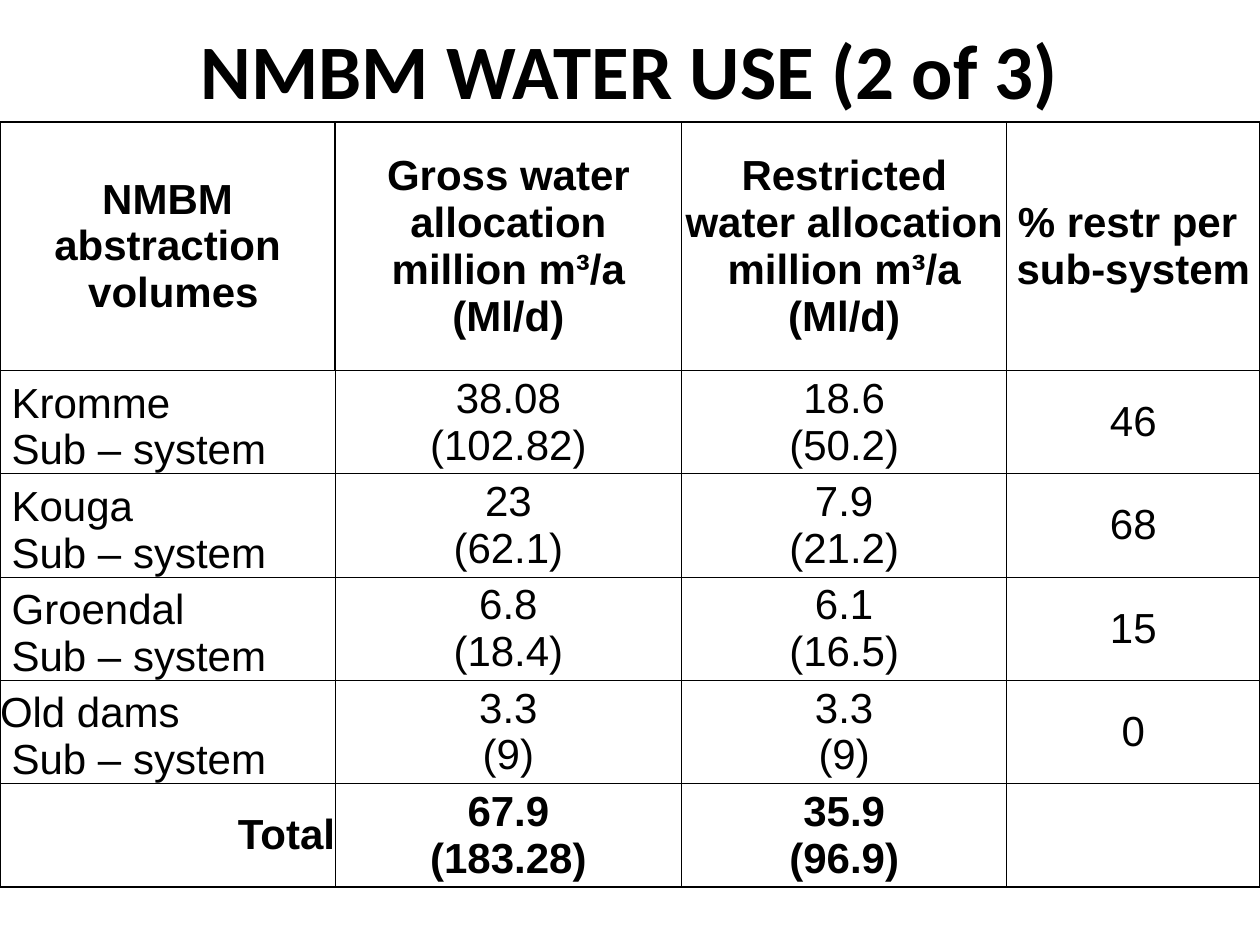
from lxml import etree
from pptx import Presentation
from pptx.dml.color import RGBColor
from pptx.enum.text import MSO_ANCHOR, PP_ALIGN
from pptx.oxml.ns import qn
from pptx.util import Inches, Pt

LEFT, CENTER, RIGHT = PP_ALIGN.LEFT, PP_ALIGN.CENTER, PP_ALIGN.RIGHT
MIDDLE, BOTTOM = MSO_ANCHOR.MIDDLE, MSO_ANCHOR.BOTTOM
BLACK, WHITE = "000000", "FFFFFF"
TITLE_ONLY = 5

COLUMN_WIDTHS = [2.66, 2.75, 2.58, 2.01]
HEADER_HEIGHT, ROW_HEIGHT = 1.97, 0.82
TITLE_TOP, TABLE_TOP = 0.12, 0.97

# One list per row; each cell is a list of its paragraphs.
ROWS = [
    [[" NMBM ", " abstraction ", " volumes"],
     ["Gross water allocation", "million m³/a (Ml/d)"],
     ["Restricted water allocation million m³/a (Ml/d)"],
     ["% restr per ", "sub-system"]],
    [[" Kromme", " Sub – system"], ["38.08", "(102.82)"], ["18.6", "(50.2)"], ["46"]],
    [[" Kouga", " Sub – system"], ["23", "(62.1)"], ["7.9", "(21.2)"], ["68"]],
    [[" Groendal", " Sub – system"], ["6.8", "(18.4)"], ["6.1", "(16.5)"], ["15"]],
    [["Old dams", " Sub – system"], ["3.3", "(9)"], ["3.3", "(9)"], ["0"]],
    [["Total"], ["67.9", "(183.28)"], ["35.9", "(96.9)"], []],
]
LAST_ROW, LAST_COLUMN = len(ROWS) - 1, len(COLUMN_WIDTHS) - 1


def write(frame, lines, font, size, bold, align):
    """Fill a text frame with one single-run paragraph per line."""
    for index, line in enumerate(lines):
        para = frame.add_paragraph() if index else frame.paragraphs[0]
        para.alignment = align
        span = para.add_run()
        span.text = line
        span.font.name = font
        span.font.size = Pt(size)
        span.font.bold = bold
        span.font.color.rgb = RGBColor.from_string(BLACK)


def draw_border(cell, side, points):
    line = etree.SubElement(cell._tc.get_or_add_tcPr(), qn(f"a:ln{side}"), w=str(Pt(points)))
    fill = etree.SubElement(line, qn("a:solidFill"))
    etree.SubElement(fill, qn("a:srgbClr"), val=BLACK)


deck = Presentation()
deck.slide_width, deck.slide_height = Inches(10), Inches(7.5)
page = deck.slides.add_slide(deck.slide_layouts[TITLE_ONLY])

title = page.shapes.title
title.left, title.top = 0, Inches(TITLE_TOP)
title.width, title.height = deck.slide_width, Inches(TABLE_TOP - TITLE_TOP)
title.fill.solid()
title.fill.fore_color.rgb = RGBColor.from_string(WHITE)
title.text_frame.vertical_anchor = MIDDLE
write(title.text_frame, ["NMBM WATER USE (2 of 3)"], "Calibri", 44, True, CENTER)

table_height = HEADER_HEIGHT + LAST_ROW * ROW_HEIGHT
table = page.shapes.add_table(len(ROWS), len(COLUMN_WIDTHS), 0, Inches(TABLE_TOP),
                              deck.slide_width, Inches(table_height)).table
table.horz_banding = False
for column, width in zip(table.columns, COLUMN_WIDTHS):
    column.width = Inches(width)

for r, row in enumerate(ROWS):
    table.rows[r].height = Inches(ROW_HEIGHT if r else HEADER_HEIGHT)
    is_header, is_total = r == 0, r == LAST_ROW
    for c, lines in enumerate(row):
        cell = table.cell(r, c)
        is_name = c == 0 and not is_header and not is_total
        cell.margin_left = cell.margin_right = cell.margin_top = cell.margin_bottom = 0
        cell.vertical_anchor = BOTTOM if is_name else MIDDLE

        # The header and the outer frame have heavier lines.
        heavy = {"L": c == 0, "R": c == LAST_COLUMN, "T": r <= 1, "B": is_total}
        for side, on_frame in heavy.items():
            draw_border(cell, side, 1 if is_header or on_frame else 0.5)
        cell.fill.solid()
        cell.fill.fore_color.rgb = RGBColor.from_string(WHITE)

        if is_name:
            align = LEFT
        elif is_total and c == 0:
            align = RIGHT
        else:
            align = CENTER
        write(cell.text_frame, lines, "Arial", 24, is_header or is_total, align)

deck.save("out.pptx")
